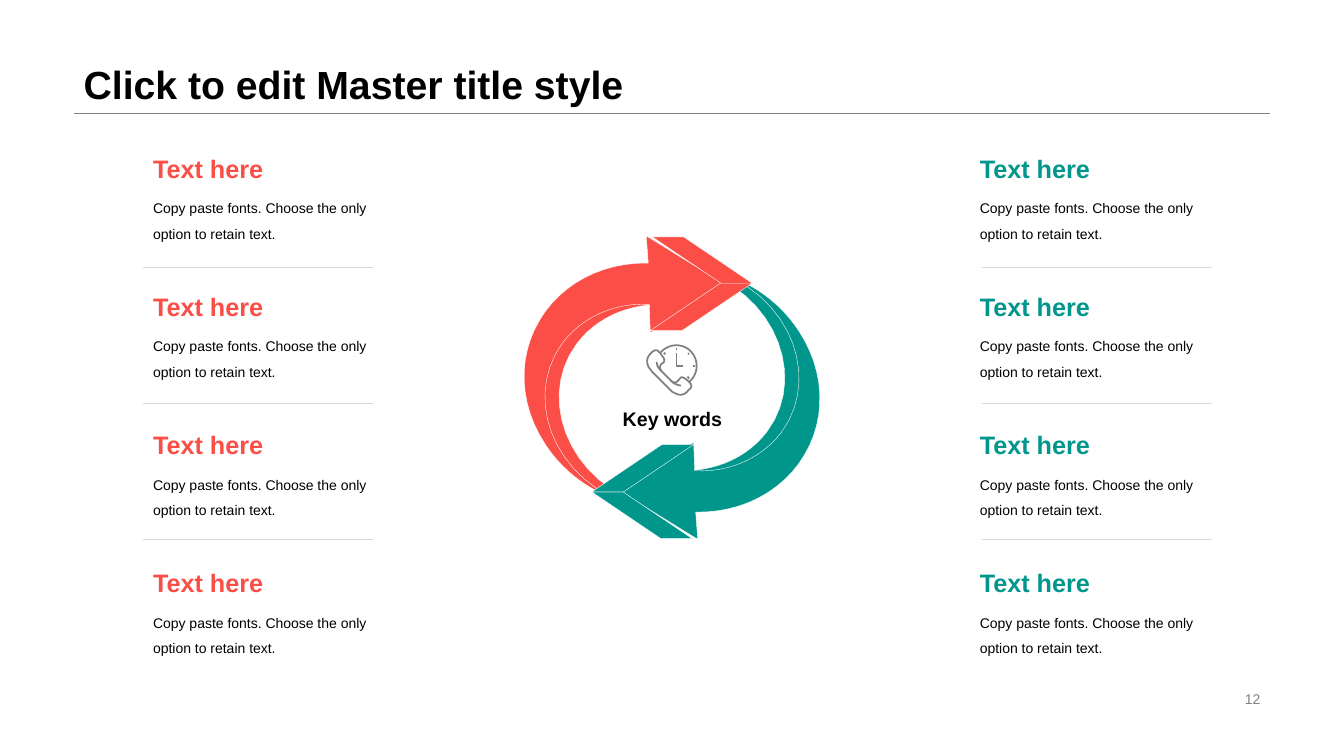
from lxml import etree
from pptx import Presentation
from pptx.dml.color import RGBColor
from pptx.enum.shapes import MSO_CONNECTOR, MSO_SHAPE
from pptx.enum.text import MSO_ANCHOR, MSO_AUTO_SIZE, PP_ALIGN
from pptx.oxml.ns import qn
from pptx.util import Inches, Pt

STRAIGHT = MSO_CONNECTOR.STRAIGHT
PARALLELOGRAM = MSO_SHAPE.PARALLELOGRAM
TOP, MIDDLE, BOTTOM = MSO_ANCHOR.TOP, MSO_ANCHOR.MIDDLE, MSO_ANCHOR.BOTTOM
LEFT, CENTER, RIGHT = PP_ALIGN.LEFT, PP_ALIGN.CENTER, PP_ALIGN.RIGHT

RED = RGBColor(0xFB, 0x4E, 0x46)
TEAL = RGBColor(0x00, 0x96, 0x8C)
BLACK = RGBColor(0x00, 0x00, 0x00)
WHITE = RGBColor(0xFF, 0xFF, 0xFF)
GRAY = RGBColor(0x80, 0x80, 0x80)
LIGHT_GRAY = RGBColor(0xD9, 0xD9, 0xD9)
FONT = "Arial"

# Content
TITLE = "Click to edit Master title style"
PAGE_NUMBER = "12"
KEY_WORDS = "Key words"
ITEM = ("Text here", "Copy paste fonts. Choose the only option to retain text.")
# Each column: colour, text left, divider left, items
COLUMNS = [
    (RED, 1.42, 1.42, [ITEM] * 4),
    (TEAL, 9.62, 9.74, [ITEM] * 4),
]

# Teal half of the cycle, in inches; the red half is the same after a half turn
TURN_X, TURN_Y = 13.33, 7.69
BANDS = [
    """M 7.32 2.78 L 7.54 2.92 L 7.77 3.14 L 7.97 3.55 L 7.93 3.57
    C 8.03 3.89 8.01 4.22 7.84 4.5 C 7.64 4.85 7.26 5.06 6.83 5.07
    L 6.81 4.67 C 7.13 4.66 7.42 4.53 7.61 4.28
    C 7.94 3.84 7.79 3.19 7.27 2.84 L 7.25 2.83 Z""",
    """M 7.28 2.76 C 7.54 2.86 7.77 3.05 7.92 3.28
    C 8.18 3.67 8.2 4.14 7.98 4.51 C 7.77 4.87 7.36 5.09 6.9 5.08
    L 6.92 5.35 L 6.11 4.85 L 6.88 4.39 L 6.89 4.67
    C 7.23 4.69 7.55 4.55 7.75 4.29 C 8.08 3.84 7.93 3.2 7.42 2.85
    C 7.38 2.83 7.35 2.81 7.31 2.79 L 7.32 2.78 Z""",
]
# Arrowhead facets: left, top, width, height, flipped
FACETS = [(5.87, 4.88, 0.99, 0.46, True), (5.87, 4.41, 1.01, 0.47, False)]

# Phone and clock icon, in thousandths of an inch
ICON_LEFT, ICON_TOP = 6.4, 3.4
ICON = """M 60 100 C 10 150 10 190 35 245 C 50 260 60 280 75 295 L 245 465
C 260 480 270 490 285 495 C 340 530 390 520 425 475 L 445 455
C 460 445 460 430 455 415 C 440 385 390 350 385 350
C 370 340 350 340 345 355 C 330 370 320 385 310 390
C 290 400 270 390 255 375 L 165 285 C 150 270 140 240 155 215
C 160 210 180 200 185 190 C 190 180 190 170 185 155
C 170 130 140 90 125 80 C 110 70 90 70 60 100 Z
M 115 190 C 115 230 135 260 165 285 M 355 425 C 310 420 275 400 255 375
M 155 95 C 195 50 250 25 310 25 C 425 25 510 120 510 230
C 510 290 485 345 440 385 M 310 105 L 310 230 L 370 230
M 310 50 L 310 75 M 435 105 L 425 115 M 185 100 L 200 115
M 470 230 L 490 230 M 420 335 L 435 355"""
CURVE_STEPS = 12

deck = Presentation()
deck.slide_width, deck.slide_height = Inches(13.33), Inches(7.5)
page = deck.slides.add_slide(deck.slide_layouts[5])
shapes = page.shapes


def write(box, text, size, color, bold=False, align=LEFT, anchor=TOP,
          spacing=1.0, wrap=True):
    frame = box.text_frame
    frame.auto_size = MSO_AUTO_SIZE.NONE
    frame.word_wrap = wrap
    frame.vertical_anchor = anchor
    para = frame.paragraphs[0]
    para.alignment, para.line_spacing = align, spacing
    span = para.add_run()
    span.text = text
    span.font.name, span.font.size = FONT, Pt(size)
    span.font.bold, span.font.color.rgb = bold, color


def text_box(left, top, width, height, *args, **style):
    box = shapes.add_textbox(Inches(left), Inches(top), Inches(width), Inches(height))
    write(box, *args, **style)


def rule(left, right, y, color):
    line = shapes.add_connector(STRAIGHT, Inches(left), Inches(y), Inches(right), Inches(y))
    line.line.color.rgb, line.line.width = color, Pt(0.25)
    etree.SubElement(line._element.spPr, qn("a:effectLst"))


def paint(shape, color):
    shape.shadow.inherit = False
    shape.fill.solid()
    shape.fill.fore_color.rgb = color
    shape.line.color.rgb, shape.line.width = WHITE, Pt(0.25)


def contours(outline):
    """Turn M, L, C and Z commands into lists of points, each with a closed flag."""
    words = iter(outline.split())
    found = []

    def point():
        return float(next(words)), float(next(words))

    for command in words:
        if command == "M":
            found.append([[point()], False])
        elif command == "L":
            found[-1][0].append(point())
        elif command == "C":
            points = found[-1][0]
            corners = [points[-1], point(), point(), point()]
            for step in range(1, CURVE_STEPS + 1):
                t = step / CURVE_STEPS
                weights = [(1 - t) ** 3, 3 * t * (1 - t) ** 2, 3 * t * t * (1 - t), t ** 3]
                points.append(tuple(sum(w * corner[axis] for w, corner in zip(weights, corners))
                                    for axis in (0, 1)))
        else:
            found[-1][1] = True
    return found


def draw(outline, place):
    builder = None
    for points, closed in contours(outline):
        spots = [tuple(Inches(value) for value in place(x, y)) for x, y in points]
        if builder is None:
            builder = shapes.build_freeform(*spots[0], scale=1.0)
        else:
            builder.move_to(*spots[0])
        builder.add_line_segments(spots[1:], close=closed)
    return builder.convert_to_shape()


# Title with its rule, and page number
title = shapes.title
title.left, title.top, title.width, title.height = map(Inches, (0.73, 0, 11.87, 1.12))
write(title, TITLE, 28, BLACK, bold=True, anchor=BOTTOM, spacing=0.9)
rule(0.73, 12.6, 1.12, GRAY)
text_box(9.42, 6.82, 3.18, 0.23, PAGE_NUMBER, 10, GRAY, align=RIGHT, anchor=MIDDLE)

# Text columns with dividers
for color, text_left, rule_left, items in COLUMNS:
    for row, (heading, detail) in enumerate(items):
        top = 1.47 + 1.37 * row
        text_box(text_left, top + 0.38, 2.4, 0.61, detail, 10, BLACK, spacing=1.5)
        text_box(text_left, top, 2.4, 0.38, heading, 18, color, bold=True)
        if row:
            rule(rule_left, rule_left + 2.28, 1.3 + 1.35 * row, LIGHT_GRAY)

# Curved arrow bands
for color, turned in ((TEAL, False), (RED, True)):
    for band in BANDS:
        paint(draw(band, lambda x, y: (TURN_X - x, TURN_Y - y) if turned else (x, y)), color)

# Arrowhead facets
for color, turned in ((RED, True), (TEAL, False)):
    for left, top, width, height, flipped in FACETS:
        if turned:
            left, top = TURN_X - left - width, TURN_Y - top - height
        facet = shapes.add_shape(PARALLELOGRAM, Inches(left), Inches(top),
                                 Inches(width), Inches(height))
        facet.adjustments[0] = 1.48
        facet.rotation = 0 if turned else 180
        if flipped:
            facet._element.spPr.find(qn("a:xfrm")).set("flipH", "1")
        paint(facet, color)

# Centre icon and label
icon = draw(ICON, lambda x, y: (ICON_LEFT + x / 1000, ICON_TOP + y / 1000))
icon.shadow.inherit = False
icon.fill.background()
icon.line.color.rgb, icon.line.width = GRAY, Pt(1.25)
text_box(6.17, 3.87, 1, 0.57, KEY_WORDS, 14, BLACK, bold=True, align=CENTER,
         anchor=MIDDLE, wrap=False)

deck.save("out.pptx")
